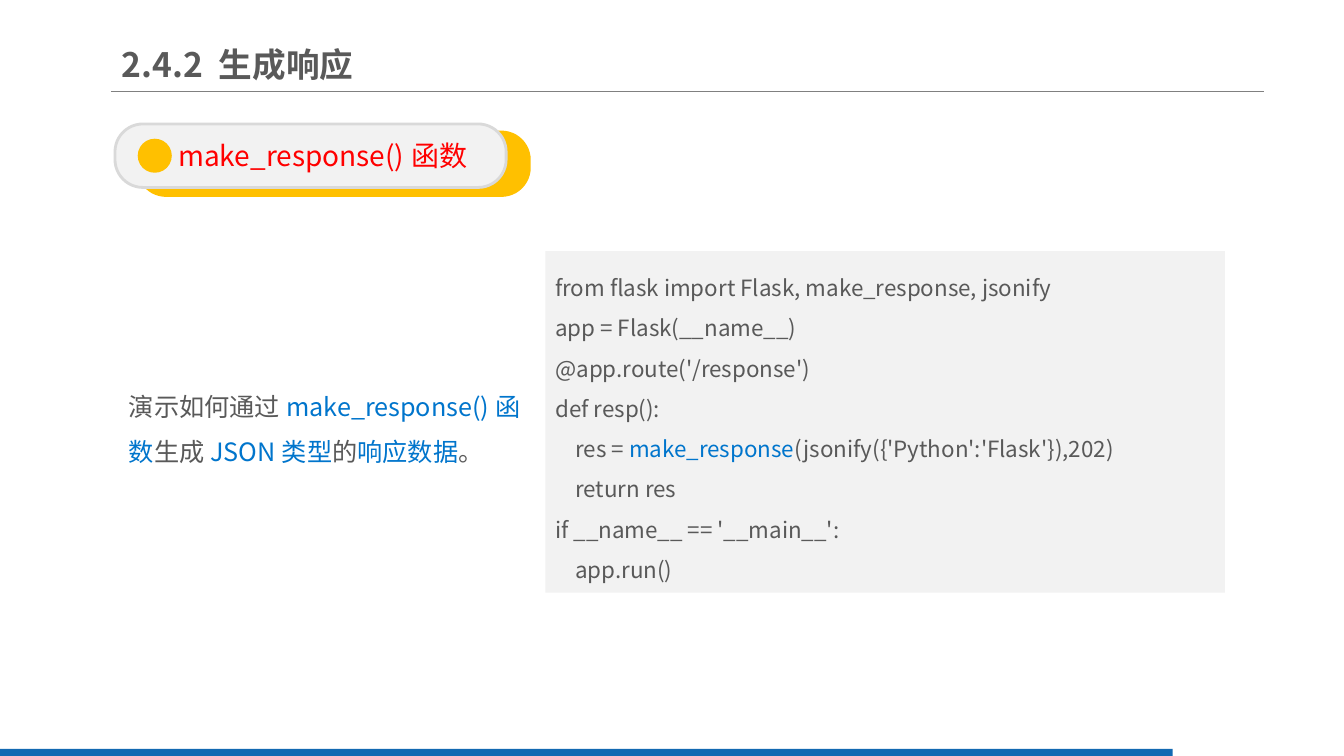
"""Build the slide that explains make_response() with a code sample."""
from lxml import etree
from pptx import Presentation, util as u
from pptx.dml.color import RGBColor
from pptx.enum import shapes, text
from pptx.oxml.ns import qn

FONT = "Noto Sans CJK SC"
GREY, BLUE, RED = "595959", "0075CC", "FF0000"
AMBER, PALE, BORDER = "FFC000", "F2F2F2", "D9D9D9"
RULE, FOOTER = "808080", "1369B2"


def color(hex_value):
    return RGBColor.from_string(hex_value)


class SlideBuilder:
    def __init__(self, presentation, font):
        self.slide = presentation.slides.add_slide(presentation.slide_layouts[5])
        self.font = font

    def fill_text(self, shape, paragraphs, size, bold=False, spacing=1.0,
                  align=text.PP_ALIGN.LEFT, **frame_format):
        frame = shape.text_frame
        settings = {"word_wrap": True, "auto_size": text.MSO_AUTO_SIZE.NONE,
                    "vertical_anchor": text.MSO_ANCHOR.MIDDLE, **frame_format}
        for name, value in settings.items():
            setattr(frame, name, value)
        for index, runs in enumerate(paragraphs):
            paragraph = frame.add_paragraph() if index else frame.paragraphs[0]
            paragraph.alignment = align
            paragraph.line_spacing = spacing
            for words, hex_value in runs:
                run = paragraph.add_run()
                run.text = words
                values = {"name": self.font, "size": u.Pt(size), "bold": bold}
                for name, value in values.items():
                    setattr(run.font, name, value)
                run.font.color.rgb = color(hex_value)
                east_asian = etree.Element(qn("a:ea"), typeface=self.font)
                run.font._element.find(qn("a:latin")).addnext(east_asian)

    def title(self, words, box):
        shape = self.slide.shapes.title
        for name, value in zip(("left", "top", "width", "height"), box):
            setattr(shape, name, u.Inches(value))
        self.fill_text(shape, [[(words, GREY)]], 24, bold=True,
                       margin_left=0, margin_right=0,
                       margin_top=u.Inches(0.07), margin_bottom=u.Inches(0.07))

    def shape(self, kind, box, fill, outline=None, corner=None):
        shape = self.slide.shapes.add_shape(kind, *map(u.Inches, box))
        shape.shadow.inherit = False
        shape.fill.solid()
        shape.fill.fore_color.rgb = color(fill)
        if outline:
            shape.line.color.rgb = color(outline)
            shape.line.width = u.Pt(2)
        else:
            shape.line.fill.background()
        if corner is not None:
            shape.adjustments[0] = corner
        return shape

    def text_box(self, box, paragraphs, size, **formats):
        shape = self.slide.shapes.add_textbox(*map(u.Inches, box))
        self.fill_text(shape, paragraphs, size, **formats)

    def line(self, ends, hex_value, width):
        connector = self.slide.shapes.add_connector(
            shapes.MSO_CONNECTOR.STRAIGHT, *map(u.Inches, ends))
        connector.line.color.rgb = color(hex_value)
        connector.line.width = u.Pt(width)
        etree.SubElement(connector._element.spPr, qn("a:effectLst"))


def main():
    presentation = Presentation()
    presentation.slide_width = u.Inches(13.33)
    presentation.slide_height = u.Inches(7.5)
    builder = SlideBuilder(presentation, FONT)
    preset = shapes.MSO_SHAPE

    builder.line((1.1, 0.91, 12.54, 0.91), RULE, 0.75)
    builder.shape(preset.RECTANGLE, (0, 7.43, 11.63, 0.09), FOOTER)
    builder.title("2.4.2 生成响应", (1.21, 0.36, 4.76, 0.55))

    builder.shape(preset.ROUNDED_RECTANGLE, (1.37, 1.31, 3.88, 0.63),
                  AMBER, AMBER, 0.44)
    heading = builder.shape(preset.ROUNDED_RECTANGLE, (1.14, 1.23, 3.88, 0.63),
                            PALE, BORDER, 0.44)
    builder.fill_text(heading, [[("make_response()函数", RED)]], 20,
                      align=text.PP_ALIGN.CENTER, margin_left=u.Inches(0.34))
    builder.shape(preset.OVAL, (1.38, 1.39, 0.31, 0.31), AMBER, AMBER)

    description = [("演示如何通过", GREY), ("make_response()函数", BLUE),
                   ("生成", GREY), ("JSON类型", BLUE), ("的", GREY),
                   ("响应数据", BLUE), ("。", GREY)]
    builder.text_box((1.18, 3.68, 4.1, 1.01), [description], 18, spacing=1.5,
                     vertical_anchor=text.MSO_ANCHOR.TOP,
                     auto_size=text.MSO_AUTO_SIZE.SHAPE_TO_FIT_TEXT)

    code = [
        [("from flask import Flask, make_response, jsonify", GREY)],
        [("app = Flask(__name__)", GREY)],
        [("@app.route('/response')", GREY)],
        [("def resp():", GREY)],
        [("    res = ", GREY), ("make_response", BLUE),
         ("(jsonify({'Python':'Flask'}),202)", GREY)],
        [("    return res", GREY)],
        [("if __name__ == '__main__':", GREY)],
        [("    app.run()", GREY)],
    ]
    panel = builder.shape(preset.RECTANGLE, (5.41, 2.49, 6.74, 3.39), PALE)
    builder.fill_text(panel, code, 16, spacing=1.5)

    presentation.save("out.pptx")


if __name__ == "__main__":
    main()
